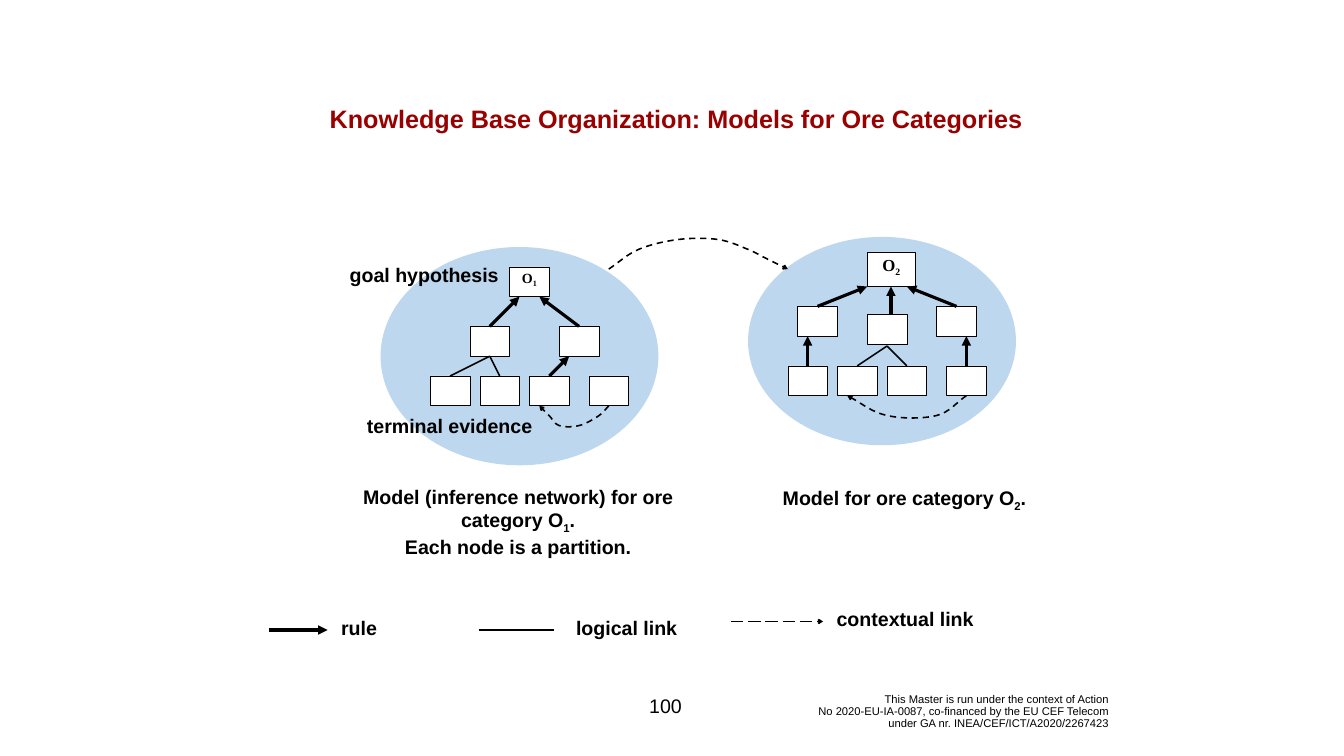
from lxml.etree import SubElement
from pptx import Presentation
from pptx.dml.color import RGBColor
from pptx.enum.dml import MSO_LINE_DASH_STYLE as Dash
from pptx.enum.shapes import MSO_CONNECTOR as Connector, MSO_SHAPE as Shape
from pptx.enum.text import MSO_ANCHOR as Anchor, PP_ALIGN as Align
from pptx.oxml.ns import qn
from pptx.util import Cm, Pt

THEME = {
    "title": "990000", "ink": "000000", "ellipse": "BDD7EE", "node": "FFFFFF",
    "font": "Arial", "node_font": "Times New Roman",
    "title_size": 36, "label_size": 28, "footer_size": 16,
    "outline": 0.75, "thin": 2.25, "thick": 4.5,
}

# Lengths are in centimetres; inside a model they count from its ellipse's corner.
NODE_SIZE = (2, 1.5)
MODELS = [
    {
        "origin": (19.18, 12.45), "size": (14, 11),
        "goal": ("Ο_1_", (6.5, 1, 2, 1.5), 20),
        "nodes": [(4.5, 4), (9, 4), (2.5, 6.5), (5, 6.5), (7.5, 6.5), (10.5, 6.5)],
        "rules": [((5.5, 4), (7, 2.5)), ((10, 4), (8, 2.5)), ((8.5, 6.5), (9.5, 5.5))],
        "logical": [((3.5, 6.5), (5.5, 5.5)), ((5.5, 5.5), (6, 6.5))],
        "contextual": [(11.5, 8), (11, 8.5), (10, 9), (9, 9), (8.5, 8.5), (8, 8)],
    },
    {
        "origin": (37.7, 11.94), "size": (13.5, 10.5),
        "goal": ("Ο_2_", (6, 0.76, 2.44, 1.73), 24),
        "nodes": [(2.5, 3.5), (6, 3.9), (9.5, 3.5),
                  (2, 6.5), (4.5, 6.5), (7, 6.5), (10, 6.5)],
        "rules": [((3.5, 3.5), (6, 2.5)), ((3, 6.5), (3, 5)), ((7.2, 3.9), (7.2, 2.5)),
                  ((10.5, 3.5), (8, 2.5)), ((11, 6.5), (11, 5))],
        "logical": [((5.5, 6.5), (7, 5.5)), ((8, 6.5), (7, 5.5))],
        "contextual": [(11, 8), (9.5, 9), (7, 9), (5, 8)],
    },
]
BETWEEN_MODELS = [(30.68, 13.56), (32.18, 12.57), (34.18, 12.07), (36.19, 12.07),
                  (37.7, 12.57), (38.7, 13.07), (39.7, 13.56)]

LABELS = [  # text, box, alignment
    ("goal hypothesis", (16.51, 13.13, 9.73, 1.45), Align.CENTER),
    ("terminal evidence", (15.67, 20.75, 13.97, 1.45), Align.CENTER),
    ("Model (inference network) for ore category Ο_1_.\nEach node is a partition.",
     (16.8, 24.31, 18.62, 3.84), Align.CENTER),
    ("Model for ore category Ο_2_.", (36.27, 24.36, 18.62, 1.45), Align.CENTER),
    ("rule", (16.94, 30.91, 5.92, 1.45), Align.LEFT),
    ("logical link", (28.78, 30.91, 7.19, 1.45), Align.LEFT),
    ("contextual link", (41.91, 30.48, 8.36, 1.45), Align.LEFT),
]
LEGEND = [  # start, end, line format
    ((13.54, 31.75), (16.51, 31.75), {"width": THEME["thick"], "head": "triangle"}),
    ((24.13, 31.75), (27.94, 31.75), {"width": THEME["thin"]}),
    ((36.83, 31.32), (41.48, 31.32),
     {"width": THEME["thin"], "head": "arrow", "dash": Dash.LONG_DASH}),
]
TITLE = "Knowledge Base Organization: Models for Ore Categories"
PAGE_NUMBER = "100"
FOOTER = ("This Master is run under the context of Action\v"
          "No 2020-EU-IA-0087, co-financed by the EU CEF Telecom\v"
          "under GA nr. INEA/CEF/ICT/A2020/2267423")


def color(name):
    return RGBColor.from_string(THEME[name])


def shift(point, origin):
    return point[0] + origin[0], point[1] + origin[1]


def write(shape, text, size=THEME["label_size"], font=THEME["font"], ink="ink",
          bold=True, align=Align.CENTER, anchor=Anchor.TOP, spacing=None):
    """Fill a shape with text; a part between underscores becomes a subscript."""
    frame = shape.text_frame
    frame.word_wrap = True
    frame.vertical_anchor = anchor
    for index, line in enumerate(text.split("\n")):
        para = frame.paragraphs[0] if index == 0 else frame.add_paragraph()
        para.alignment = align
        if spacing:
            para.line_spacing = spacing
        for part, words in enumerate(line.split("_")):
            for row, piece in enumerate(words.split("\v")):
                if row:
                    para.add_line_break()
                span = para.add_run()
                span.text = piece
                span.font.size = Pt(size)
                span.font.name = font
                span.font.bold = bold
                span.font.color.rgb = color(ink)
                if part % 2:
                    span.font._element.set("baseline", "-25000")


def add_text(page, text, box, **style):
    write(page.shapes.add_textbox(*map(Cm, box)), text, **style)


def add_block(page, kind, box, fill, outlined=False):
    block = page.shapes.add_shape(kind, *map(Cm, box))
    block.shadow.inherit = False
    block.fill.solid()
    block.fill.fore_color.rgb = color(fill)
    if outlined:
        block.line.color.rgb = color("ink")
        block.line.width = Pt(THEME["outline"])
    else:
        block.line.fill.background()
    return block


def style_line(line, width, head=None, dash=None):
    line.color.rgb = color("ink")
    line.width = Pt(width)
    if dash:
        line.dash_style = dash
    if head:
        SubElement(line._get_or_add_ln(), qn("a:tailEnd"), type=head)


def add_link(page, start, end, **style):
    link = page.shapes.add_connector(Connector.STRAIGHT, *map(Cm, start + end))
    style_line(link.line, **style)
    SubElement(link._element.spPr, qn("a:effectLst"))


def spline(points):
    """Bezier control and end points of a smooth curve through the given points."""
    def mirrored(end, inner):
        return 2 * end[0] - inner[0], 2 * end[1] - inner[1]

    chain = [mirrored(points[0], points[1]), *points, mirrored(points[-1], points[-2])]
    result = []
    for before, start, end, after in zip(chain, chain[1:], chain[2:], chain[3:]):
        result.append(tuple(s + (e - b) / 6 for b, s, e in zip(before, start, end)))
        result.append(tuple(e - (a - s) / 6 for s, e, a in zip(start, end, after)))
        result.append(end)
    return result


def add_curve(page, points):
    """Draw a dashed arrow, turning each three line segments into one Bezier."""
    builder = page.shapes.build_freeform(*map(Cm, points[0]))
    builder.add_line_segments([tuple(map(Cm, point)) for point in spline(points)],
                              close=False)
    curve = builder.convert_to_shape()
    curve.shadow.inherit = False
    curve.fill.background()
    style_line(curve.line, THEME["thin"], "arrow", Dash.DASH)
    segments = list(curve._element.iter(qn("a:lnTo")))
    outline = segments[0].getparent()
    for index in range(0, len(segments), 3):
        bezier = SubElement(outline, qn("a:cubicBezTo"))
        for segment in segments[index:index + 3]:
            bezier.append(segment[0])
            outline.remove(segment)


def add_model(page, model):
    origin = model["origin"]
    add_block(page, Shape.OVAL, origin + model["size"], "ellipse")
    text, box, size = model["goal"]
    goal = add_block(page, Shape.RECTANGLE, shift(box[:2], origin) + box[2:], "node", True)
    write(goal, text, size=size, font=THEME["node_font"])
    for corner in model["nodes"]:
        add_block(page, Shape.RECTANGLE, shift(corner, origin) + NODE_SIZE, "node", True)
    for start, end in model["rules"]:
        add_link(page, shift(start, origin), shift(end, origin),
                 width=THEME["thick"], head="triangle")
    for start, end in model["logical"]:
        add_link(page, shift(start, origin), shift(end, origin), width=THEME["thin"])
    add_curve(page, [shift(point, origin) for point in model["contextual"]])


def main():
    deck = Presentation()
    deck.slide_width, deck.slide_height = Cm(67.73), Cm(38.1)
    page = deck.slides.add_slide(deck.slide_layouts[6])
    add_text(page, FOOTER, (38.15, 34.9, 17.98, 1.93), size=THEME["footer_size"],
             bold=False, align=Align.RIGHT, anchor=Anchor.MIDDLE, spacing=0.9)
    add_text(page, PAGE_NUMBER, (32.13, 34.57, 2.82, 2.03), bold=False,
             anchor=Anchor.MIDDLE)
    for model in MODELS:
        add_model(page, model)
    add_curve(page, BETWEEN_MODELS)
    add_text(page, TITLE, (11.43, 5.08, 45.29, 1.8), size=THEME["title_size"], ink="title")
    for text, box, align in LABELS:
        add_text(page, text, box, align=align)
    for start, end, style in LEGEND:
        add_link(page, start, end, **style)
    deck.save("out.pptx")


if __name__ == "__main__":
    main()
